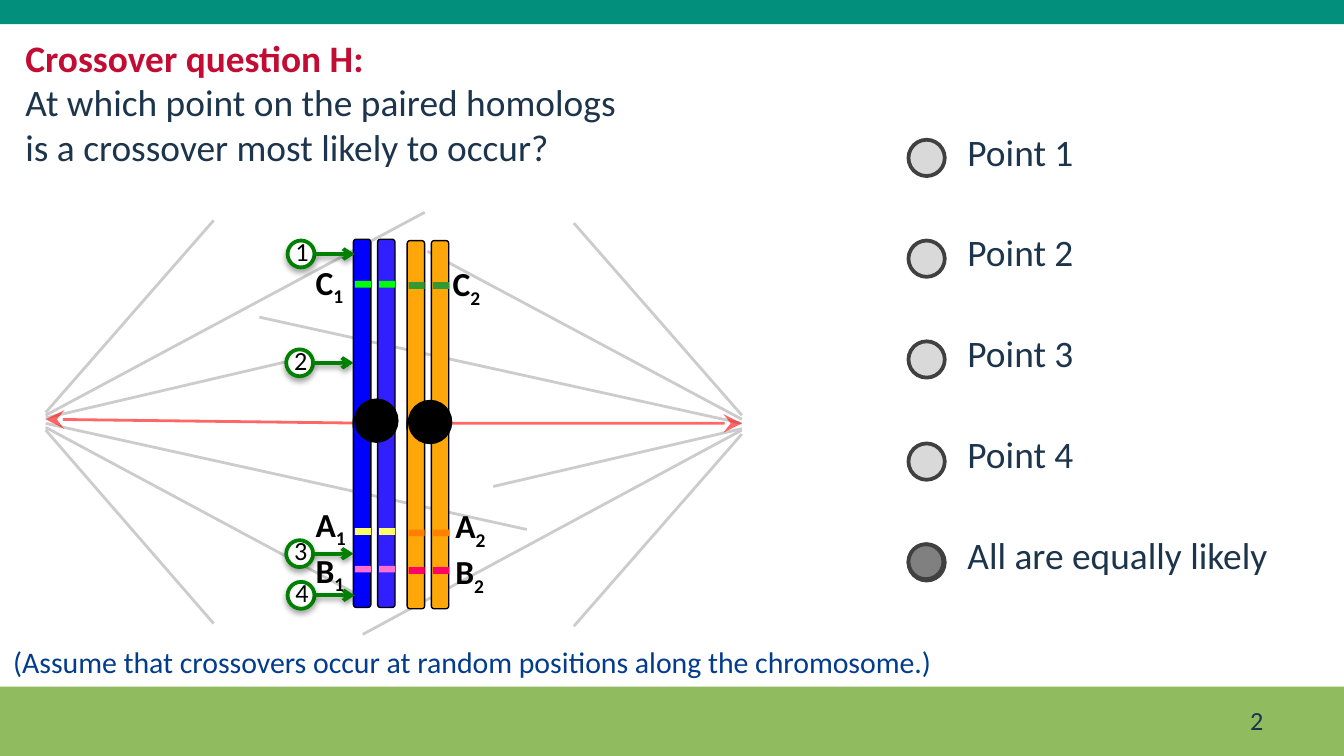
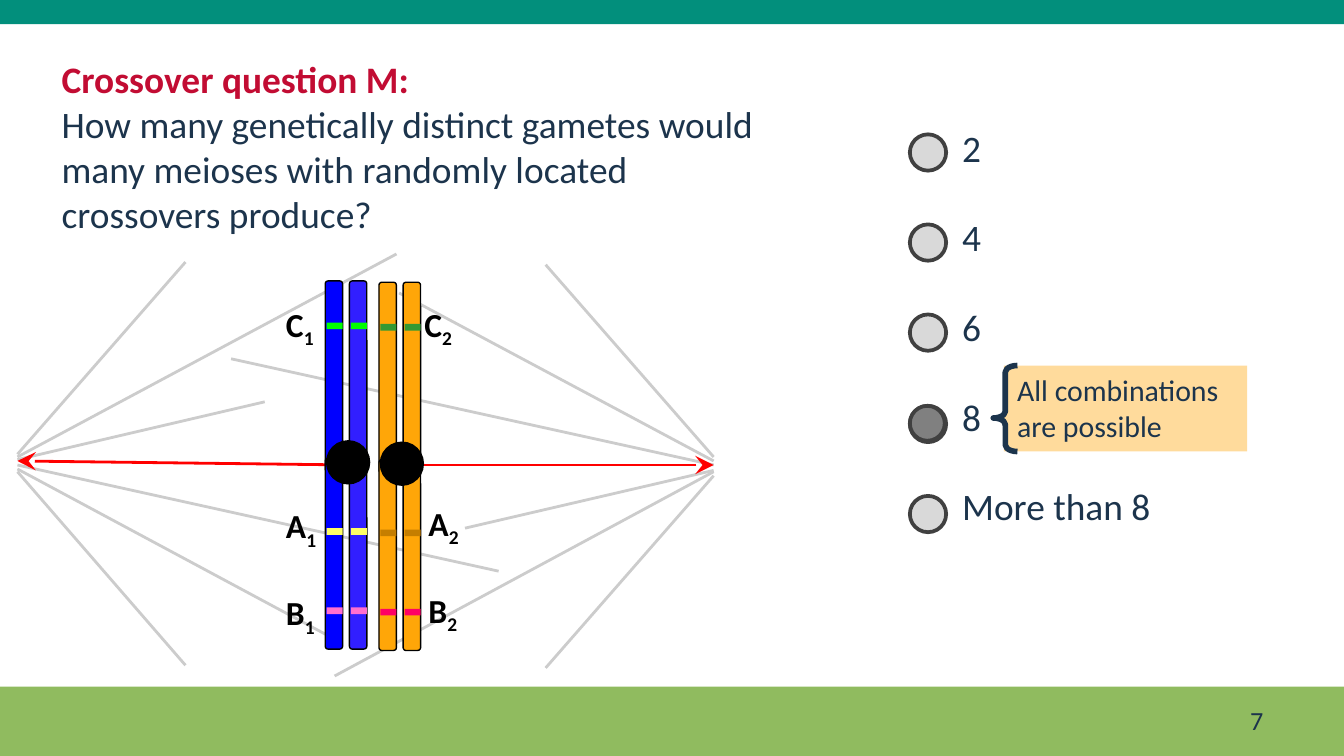
from dataclasses import dataclass
from typing import Any, NamedTuple

from lxml import etree
from pptx import Presentation
from pptx.dml.color import RGBColor
from pptx.enum import shapes, text
from pptx.oxml.ns import qn
from pptx.util import Emu, Pt

PX = 9144  # 100 px to the inch
WIDE = 1000 * PX
KIND = shapes.MSO_SHAPE
ALIGN = text.PP_ALIGN
ANCHOR = text.MSO_ANCHOR


class Style(NamedTuple):
    size: int
    color: str
    bold: bool = False


@dataclass(frozen=True)
class Theme:
    font: str = "Calibri"
    top: str = "028F7C"
    foot: str = "90BB5F"
    fiber: str = "CCCCCC"
    pull: str = "FF0000"
    mark: str = "008000"
    black: str = "000000"
    white: str = "FFFFFF"
    ring: str = "D9D9D9"
    pick: str = "808080"
    rim: str = "404040"
    note: str = "FFDB9C"
    ink: str = "1C344C"
    title: Style = Style(20, "C20C33", True)
    body: Style = Style(20, "1C344C")
    gene: Style = Style(18, "000000", True)
    small: Style = Style(16, "1C344C")
    hint: Style = Style(16, "023C8C")
    digit: Style = Style(14, "000000")
    page: Style = Style(14, "1C344C")


T = Theme()


class Box(NamedTuple):
    x: int
    y: int
    w: int
    h: int

    def emu(self) -> list[Emu]:
        return [Emu(n * PX) for n in self]


class Run(NamedTuple):
    text: str
    style: Style
    sub: bool = False


class Para(NamedTuple):
    runs: tuple[Run, ...]
    form: dict[str, Any] = {}


class Shade(NamedTuple):
    alpha: int
    blur: float
    dist: float


class Tip(NamedTuple):
    tag: str
    kind: str
    size: str


class Pair(NamedTuple):
    """One homolog: two sister chromatids with their gene bands."""
    x: int
    y: int
    fills: tuple[str, str]
    genes: dict[str, str]
    num: str
    tag_c: tuple[int, int]
    tag_ab: tuple[int, int]


class Badge(NamedTuple):
    num: str
    x: int
    y: int


class Quiz(NamedTuple):
    page: str
    head: str
    ask: str
    box: Box
    shift: tuple[int, int]
    pairs: tuple[Pair, Pair]
    gene_y: dict[str, int]
    gap: int
    fade: int
    picks: tuple[str, ...]
    pick_box: Box
    space: int
    wrap: bool
    rings: tuple[int, int, int]
    right: int


# Drawing helpers
def put(obj: Any, **form: Any) -> None:
    for key, val in form.items():
        setattr(obj, key, val)


def rgb(code: str) -> RGBColor:
    return RGBColor.from_string(code)


def node(root: Any, tag: str, **attrs: Any) -> Any:
    return etree.SubElement(root, qn(tag), {k: str(v) for k, v in attrs.items()})


def cast(item: Any, shade: Shade) -> None:
    drop = node(item._element.spPr.find(qn("a:effectLst")), "a:outerShdw",
                blurRad=Pt(shade.blur), dist=Pt(shade.dist), dir=5400000, rotWithShape=0)
    node(node(drop, "a:srgbClr", val=T.black), "a:alpha", val=shade.alpha * 1000)


def form(to: Any, kind: Any, box: Box, fill: str = "", line: str = "", wide: float = 0.75) -> Any:
    item = to.add_shape(kind, *box.emu())
    if fill:
        item.fill.solid()
        item.fill.fore_color.rgb = rgb(fill)
    else:
        item.fill.background()
    if line:
        item.line.color.rgb = rgb(line)
        item.line.width = Pt(wide)
    else:
        item.line.fill.background()
    item.shadow.inherit = False
    return item


def wire(to: Any, ends: tuple[int, ...], color: str, wide: float = 1.5,
         tip: Tip | None = None, alpha: int = 100) -> Any:
    item = to.add_connector(shapes.MSO_CONNECTOR.STRAIGHT, *(Emu(n * PX) for n in ends))
    item.line.color.rgb = rgb(color)
    item.line.width = Pt(wide)
    edge = item.line._get_or_add_ln()
    if alpha < 100:
        node(edge.find(".//" + qn("a:srgbClr")), "a:alpha", val=alpha * 1000)
    if tip:
        node(edge, tip.tag, type=tip.kind, w=tip.size, len=tip.size)
    node(item._element.spPr, "a:effectLst")
    return item


def fill_text(item: Any, paras: list[Para], wrap: bool = True, grow: bool = True,
              anchor: Any = ANCHOR.TOP) -> None:
    frame = item.text_frame
    size = text.MSO_AUTO_SIZE
    put(frame, word_wrap=wrap, vertical_anchor=anchor,
        auto_size=size.SHAPE_TO_FIT_TEXT if grow else size.NONE)
    for i, para in enumerate(paras):
        line = frame.add_paragraph() if i else frame.paragraphs[0]
        put(line, **{"alignment": ALIGN.LEFT, **para.form})
        for part in para.runs:
            run = line.add_run()
            run.text = part.text
            put(run.font, name=T.font, size=Pt(part.style.size), bold=part.style.bold)
            run.font.color.rgb = rgb(part.style.color)
            if part.sub:
                run._r.get_or_add_rPr().set("baseline", "-25000")


def say(to: Any, box: Box, paras: list[Para], **opts: Any) -> None:
    fill_text(to.add_textbox(*box.emu()), paras, **opts)


def plain(words: str, style: Style, **opts: Any) -> Para:
    return Para((Run(words, style),), opts)


def gene(name: str, num: str, **opts: Any) -> Para:
    return Para((Run(name, T.gene), Run(num, T.gene, True)), opts)


# Spindle and chromosomes
FIBERS = [
    (552, 312, 318, 187), (552, 309, 427, 166), (552, 315, 193, 236),
    (270, 472, 552, 320), (427, 466, 552, 323), (367, 362, 552, 319),
    (34, 318, 267, 443), (34, 320, 159, 464), (34, 315, 392, 394),
    (316, 158, 34, 309), (159, 164, 34, 307), (218, 268, 34, 311),
]
PULLS = [(552, 315, 303, 315), (34, 312, 282, 315)]
STEP, ARM, DROP = 18, 142, 132


def spindle(to: Any, shift: tuple[int, int], fade: int) -> None:
    dx, dy = shift
    pull = {"color": T.pull, "tip": Tip("a:headEnd", "stealth", "lg"), "alpha": fade}
    for lines, look in ((FIBERS, {"color": T.fiber}), (PULLS, pull)):
        for x1, y1, x2, y2 in lines:
            wire(to, (x1 + dx, y1 + dy, x2 + dx, y2 + dy), **look)


def homolog(to: Any, pair: Pair, quiz: Quiz) -> None:
    x, y = pair.x + quiz.shift[0], pair.y + quiz.shift[1]
    say(to, Box(*pair.tag_ab, 44, 101 if quiz.gap else 71),
        [gene("A", pair.num), gene("B", pair.num, space_before=Pt(quiz.gap))], wrap=False)
    for i, fill in enumerate(pair.fills):
        for drop in (0, DROP):
            form(to, KIND.ROUNDED_RECTANGLE, Box(x + i * STEP, y + drop, 13, ARM), fill, T.black)
    form(to, KIND.OVAL, Box(x + 1, y + 119, 32, 32), T.black, T.black)
    say(to, Box(*pair.tag_c, 47, 40), [gene("C", pair.num)], wrap=False)
    for name, fill in pair.genes.items():
        for i in range(2):
            form(to, KIND.RECTANGLE, Box(x + 1 + i * STEP, y + quiz.gene_y[name], 12, 5), fill)


def badge(to: Any, mark: Badge) -> None:
    x, y = mark.x, mark.y
    disc = form(to, KIND.OVAL, Box(x, y, 20, 20), T.white, T.mark, 2)
    cast(disc, Shade(35, 3.1, 1.8))
    say(to, Box(x - 4, y - 9, 30, 34), [plain(mark.num, T.digit)], wrap=False)
    cast(wire(to, (x + 20, y + 10, x + 50, y + 10), T.mark, 2, Tip("a:tailEnd", "arrow", "med")),
         Shade(38, 3.1, 1.6))


# Answers and shared parts
def answers(to: Any, quiz: Quiz) -> None:
    say(to, quiz.pick_box, [plain(p, T.body, space_after=Pt(quiz.space)) for p in quiz.picks],
        wrap=quiz.wrap)
    x, top, end = quiz.rings
    last = len(quiz.picks) - 1
    spots = [round(top + (end - top) * i / last) for i in range(last + 1)]
    for y in spots:
        form(to, KIND.OVAL, Box(x, y, 27, 27), T.ring, T.rim, 2)
    form(to, KIND.OVAL, Box(x, spots[quiz.right], 26, 26), T.pick, T.rim, 2)


def draw(deck: Any, quiz: Quiz) -> Any:
    to = deck.slides.add_slide(deck.slide_layouts[6]).shapes
    spindle(to.add_group_shape().shapes, quiz.shift, quiz.fade)
    for pair in quiz.pairs:
        homolog(to.add_group_shape().shapes, pair, quiz)
    say(to, quiz.box, [plain(quiz.head, T.title), plain(quiz.ask, T.body)])
    form(to, KIND.RECTANGLE, Box(0, 511, 1004, 53), T.foot)
    form(to, KIND.RECTANGLE, Box(0, 0, 1004, 18), T.top)
    answers(to, quiz)
    say(to, Box(717, 521, 233, 30), [plain(quiz.page, T.page, alignment=ALIGN.RIGHT)],
        grow=False, anchor=ANCHOR.MIDDLE)
    return to


# Content
def pairs(tan: str, tags: tuple[tuple[int, int], ...]) -> tuple[Pair, Pair]:
    return (Pair(303, 179, ("FFA608", "FFA608"), {"A": tan, "B": "FF0064", "C": "339933"},
                 "2", *tags[:2]),
            Pair(263, 178, ("0000FF", "311FFF"), {"A": "FFFF66", "B": "FF6FCF", "C": "00FF00"},
                 "1", *tags[2:]))


POINT = Quiz(
    "2", "Crossover question H:",
    "At which point on the paired homologs is a crossover most likely to occur?",
    Box(9, 21, 482, 111), (0, 0),
    pairs("FF8000", ((327, 191), (329, 371), (225, 190), (225, 370))),
    {"A": 215, "B": 243, "C": 31}, 0, 60,
    ("Point 1", "Point 2", "Point 3", "Point 4", "All are equally likely"),
    Box(710, 91, 246, 347), 30, False, (676, 104, 405), 4)
COUNT = Quiz(
    "7", "Crossover question M:",
    "How many genetically distinct gametes would many meioses with randomly located "
    "crossovers produce?",
    Box(36, 37, 552, 145), (-21, 31),
    pairs("C57E00", ((306, 221), (309, 369), (203, 221), (203, 371))),
    {"A": 184, "B": 243, "C": 31}, 22, 100,
    ("2", "4", "6", "8", "More than 8"),
    Box(706, 88, 222, 313), 24, True, (677, 100, 369), 3)
MARKS = [Badge("1", 214, 179), Badge("3", 213, 402), Badge("2", 213, 260), Badge("4", 214, 433)]


def main() -> None:
    deck = Presentation()
    put(deck, slide_width=Emu(WIDE), slide_height=Emu(WIDE * 9 // 16))

    # Points along the homologs
    to = draw(deck, POINT)
    for mark in MARKS:
        badge(to.add_group_shape().shapes, mark)
    say(to, Box(0, 474, 713, 37), [plain(
        "(Assume that crossovers occur at random positions along the chromosome.)", T.hint)],
        wrap=False)

    # Number of gametes, with a note beside the answer
    to = draw(deck, COUNT).add_group_shape().shapes
    note = form(to, KIND.RECTANGLE, Box(747, 272, 181, 64), T.note)
    fill_text(note, [plain("All combinations are possible", T.small, space_after=Pt(6))])
    brace = form(to, KIND.LEFT_BRACE, Box(739, 272, 18, 64), "", T.ink, 3)
    for i, val in enumerate((0.27, 0.61)):
        brace.adjustments[i] = val

    deck.save("out.pptx")


if __name__ == "__main__":
    main()
